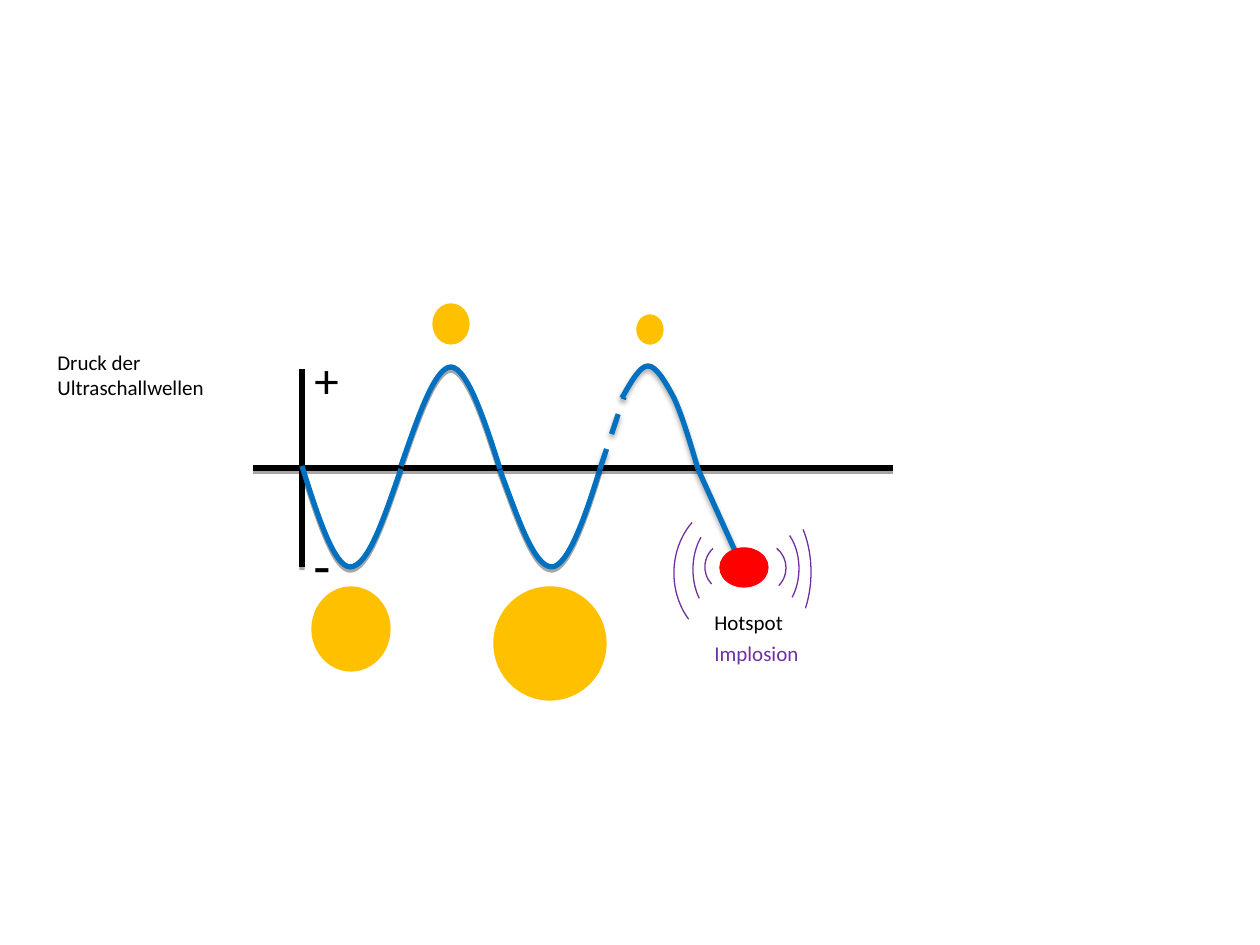
from lxml import etree
from pptx import Presentation
from pptx import util as u
from pptx.dml.color import RGBColor
from pptx.enum import dml, shapes, text
from pptx.oxml.ns import qn

PX = 914400 / 126  # EMU per px
BLACK = RGBColor(0x00, 0x00, 0x00)
BLUE = RGBColor(0x00, 0x70, 0xC0)
RED = RGBColor(0xFF, 0x00, 0x00)
AMBER = RGBColor(0xFF, 0xC0, 0x00)
PURPLE = RGBColor(0x70, 0x30, 0xA0)
FONT = "Calibri"
SOFT_BLUR = 3.1
LEFT_ARC = (81.737, 137.044)
RIGHT_ARC = (184.723, 27.465)


def emu(px):
    return u.Emu(round(px * PX))


def add_shadow(shape, blur):
    """Put a grey shadow just below a line."""
    sp_pr = shape._element.spPr
    for old in sp_pr.findall(qn("a:effectLst")):
        sp_pr.remove(old)
    effects = etree.SubElement(sp_pr, qn("a:effectLst"))
    shadow = etree.SubElement(effects, qn("a:outerShdw"), blurRad=str(u.Pt(blur)),
                              dist=str(u.Pt(1.8)), dir="5400000", rotWithShape="0")
    color = etree.SubElement(shadow, qn("a:srgbClr"), val=str(BLACK))
    etree.SubElement(color, qn("a:alpha"), val="35000")


def style_line(shape, color, width):
    shape.line.color.rgb = color
    shape.line.width = u.Pt(width)


def add_line(group, x1, y1, x2, y2, color, blur=0):
    line = group.add_connector(shapes.MSO_CONNECTOR.STRAIGHT,
                               emu(x1), emu(y1), emu(x2), emu(y2))
    style_line(line, color, 3)
    add_shadow(line, blur)


def add_path(group, points, blur=0, dashed=False):
    builder = group.build_freeform(emu(points[0][0]), emu(points[0][1]))
    builder.add_line_segments([(emu(x), emu(y)) for x, y in points[1:]], close=False)
    sp = builder.convert_to_shape()
    sp.fill.background()
    style_line(sp, BLUE, 3)
    if dashed:
        sp.line.dash_style = dml.MSO_LINE.DASH
    add_shadow(sp, blur)
    return sp


def add_wave(group, knots, blur=0):
    """Knots hold a start, then two controls and an end per cubic curve."""
    sp = add_path(group, knots, blur)
    segments = list(sp._element.iter(qn("a:lnTo")))
    for i in range(0, len(segments), 3):
        curve = etree.Element(qn("a:cubicBezTo"))
        segments[i].addprevious(curve)
        for segment in segments[i:i + 3]:
            curve.append(segment[0])
            segment.getparent().remove(segment)


def add_ellipse(group, x, y, w, h, color):
    sp = group.add_shape(shapes.MSO_SHAPE.OVAL, emu(x), emu(y), emu(w), emu(h))
    sp.shadow.inherit = False
    sp.fill.solid()
    sp.fill.fore_color.rgb = color
    style_line(sp, color, 0.75)


def add_arc(group, x, y, w, h, angles):
    sp = group.add_shape(shapes.MSO_SHAPE.ARC, emu(x), emu(y), emu(w), emu(h))
    sp.shadow.inherit = False
    sp.adjustments[0], sp.adjustments[1] = angles
    sp.fill.background()
    style_line(sp, PURPLE, 0.75)


def add_label(group, x, y, w, h, lines, size, color=BLACK, wrap=True):
    tf = group.add_textbox(emu(x), emu(y), emu(w), emu(h)).text_frame
    tf.word_wrap = wrap
    tf.auto_size = text.MSO_AUTO_SIZE.SHAPE_TO_FIT_TEXT
    tf.text = lines
    for p in tf.paragraphs:
        for r in p.runs:
            r.font.name = FONT
            r.font.size = u.Pt(size)
            r.font.color.rgb = color


def main():
    prs = Presentation()
    prs.slide_width, prs.slide_height = emu(1260), emu(945)
    s = prs.slides.add_slide(prs.slide_layouts[6])
    group = s.shapes.add_group_shape().shapes

    # Axes and their signs
    add_line(group, 302, 369, 302, 567, BLACK)
    add_line(group, 253, 468, 893, 468, BLACK)
    add_label(group, 302, 343, 40, 72, "+", 28)
    add_label(group, 301, 524, 79, 81, "-", 32)

    # Pressure wave, with a dashed gap before the last crest
    for knots in (
        [(302, 466), (318, 517), (334, 566), (350, 567), (368, 567), (384, 518), (401, 469)],
        [(401, 466), (418, 417), (435, 367), (451, 367), (467, 368), (484, 418), (500, 469)],
        [(500, 470), (518, 518), (534, 567), (552, 567), (568, 566), (585, 518), (600, 469)],
    ):
        add_wave(group, knots)
    add_path(group, [(600, 469), (624, 397)], SOFT_BLUR, dashed=True)
    add_wave(group, [(622, 398), (631, 382), (640, 366), (648, 366), (656, 366),
                     (665, 381), (674, 398), (682, 415), (690, 442), (698, 469)], SOFT_BLUR)
    add_line(group, 698, 469, 741, 564, BLUE, SOFT_BLUR)

    # Hotspot and the bubbles
    add_ellipse(group, 720, 548, 48, 39, RED)
    add_label(group, 45, 343, 174, 63, "Druck der\nUltraschallwellen", 12, wrap=False)
    for box in ((312, 587, 78, 84), (433, 304, 36, 40),
                (494, 587, 112, 113), (637, 315, 26, 29)):
        add_ellipse(group, *box, AMBER)

    # Implosion waves on both sides, from the inside out
    for left, right in (((705, 542, 49, 50), (737, 543, 49, 50)),
                        ((693, 518, 73, 103), (729, 520, 70, 97)),
                        ((674, 501, 126, 144), (729, 500, 82, 144))):
        add_arc(group, *right, RIGHT_ARC)
        add_arc(group, *left, LEFT_ARC)
    add_label(group, 702, 603, 132, 38, "Hotspot", 12)
    add_label(group, 702, 634, 155, 38, "Implosion", 12, PURPLE)

    prs.save("out.pptx")


if __name__ == "__main__":
    main()
